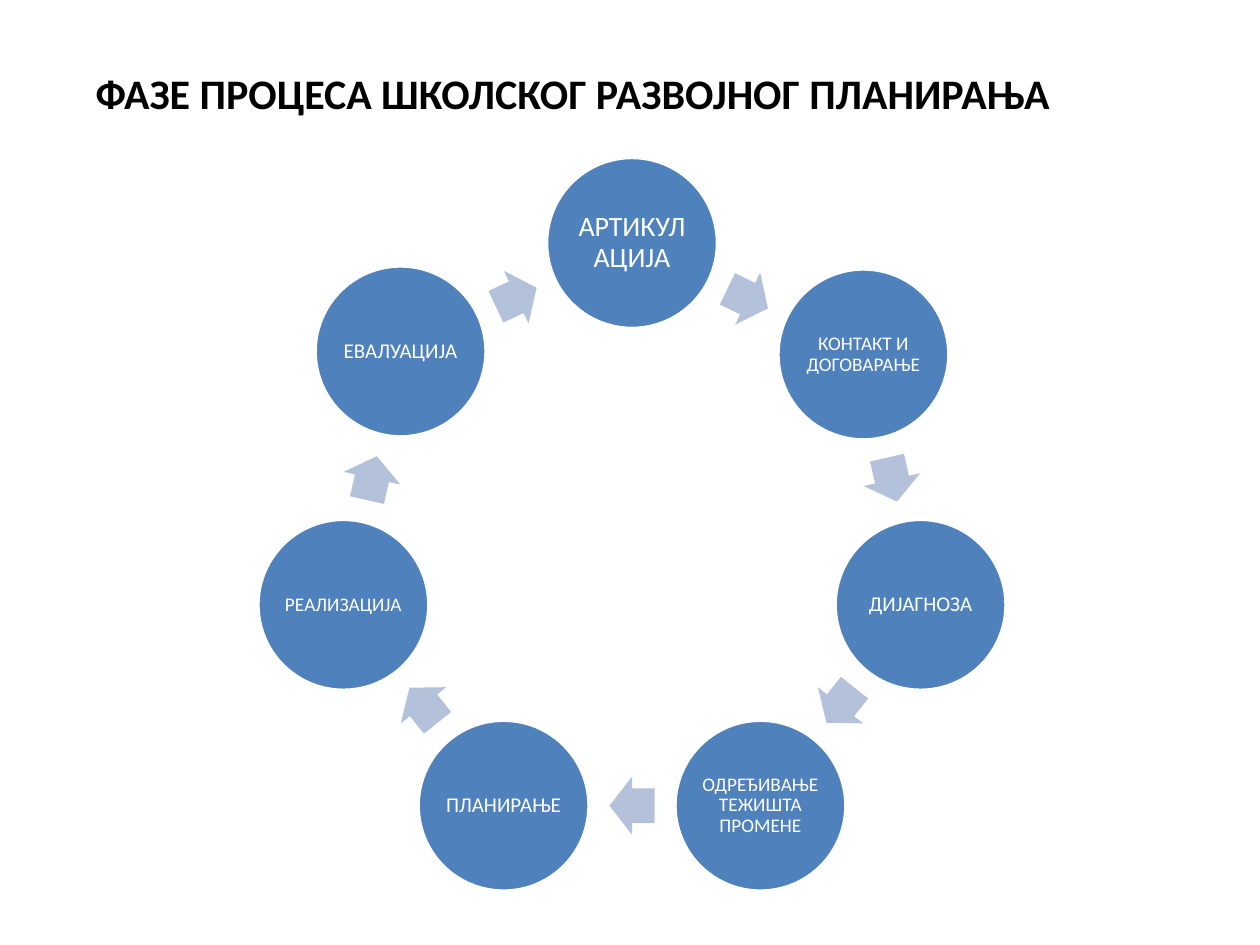
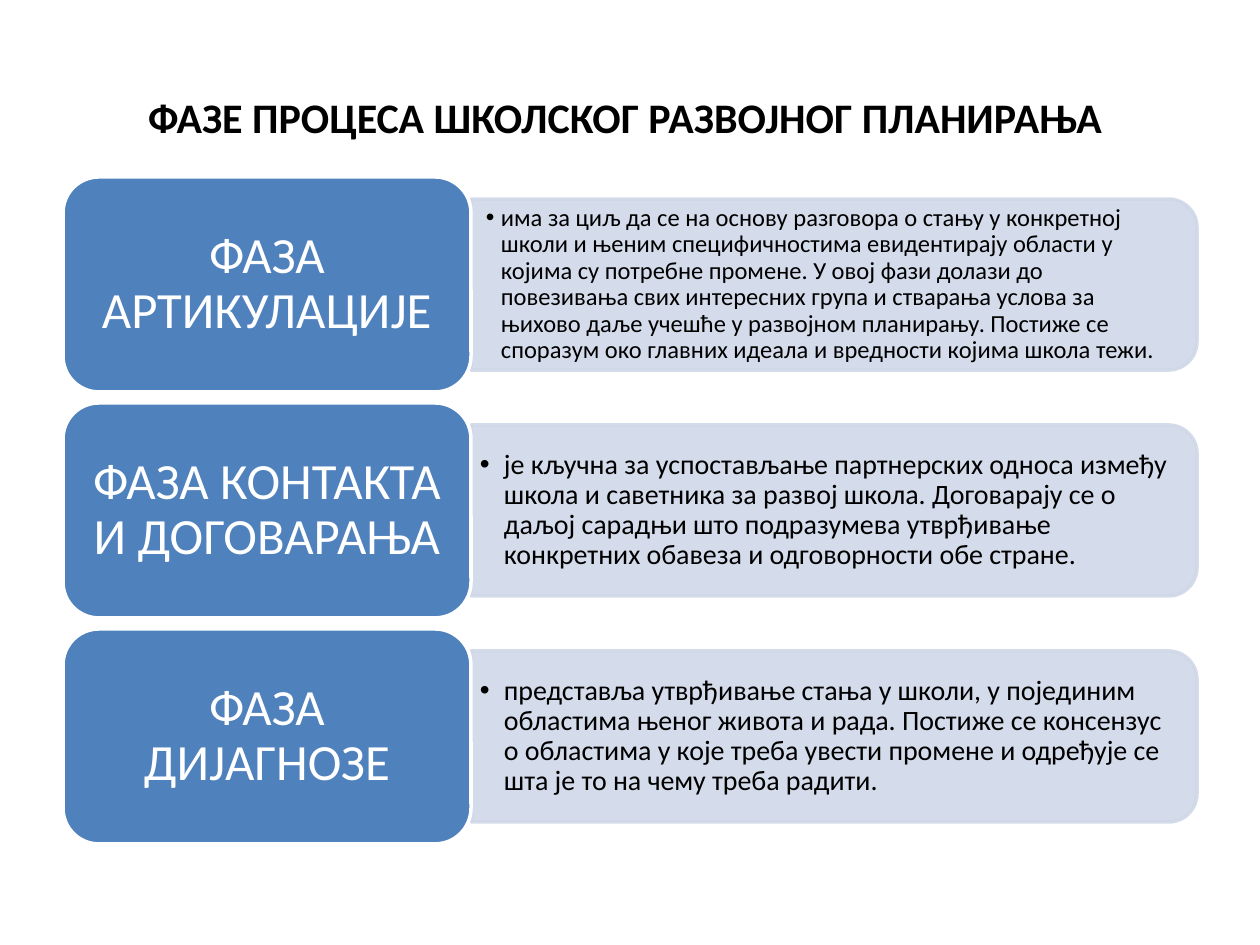
from math import atan2, cos, degrees, pi, sin

from lxml.etree import SubElement
from pptx import Presentation
from pptx.dml.color import RGBColor
from pptx.enum.shapes import MSO_SHAPE
from pptx.enum.text import MSO_ANCHOR, PP_ALIGN
from pptx.oxml.ns import qn
from pptx.util import Pt

TITLE = "ФАЗЕ ПРОЦЕСА ШКОЛСКОГ РАЗВОЈНОГ ПЛАНИРАЊА "
STAGES = [
    ("АРТИКУЛАЦИЈА", 16, 0),
    ("КОНТАКТ И ДОГОВАРАЊЕ", 11, 0),
    ("ДИЈАГНОЗА", 12, 0),
    ("ОДРЕЂИВАЊЕ ТЕЖИШТА ПРОМЕНЕ", 11, 0),
    ("ПЛАНИРАЊЕ", 12, 0),
    ("РЕАЛИЗАЦИЈА", 11, 0),
    ("ЕВАЛУАЦИЈА", 12, 3),
]
PHASES = [
    {
        "name": "ФАЗА АРТИКУЛАЦИЈЕ",
        "text": "има за циљ да се на основу разговора о стању у конкретној школи и њеним "
                "специфичностима евидентирају области у којима су потребне промене. У овој "
                "фази долази до повезивања свих интересних група и стварања услова за њихово "
                "даље учешће у развојном планирању. Постиже се споразум око главних идеала и "
                "вредности којима школа тежи.",
        "size": 14, "insets": (15, 8), "indent": 15,
    },
    {
        "name": "ФАЗА КОНТАКТА И ДОГОВАРАЊА",
        "text": "је кључна за успостављање партнерских односа између школа и саветника за "
                "развој школа. Договарају се о даљој сарадњи што подразумева утврђивање "
                "конкретних обавеза и одговорности обе стране.",
        "size": 16, "insets": (9, 4), "indent": 24,
    },
    {
        "name": "ФАЗА ДИЈАГНОЗЕ",
        "text": "представља утврђивање стања у школи, у појединим областима њеног живота и "
                "рада. Постиже се консензус о областима у које треба увести промене и "
                "одређује се шта је то на чему треба радити.",
        "size": 16, "insets": (9, 4), "indent": 24,
    },
]

FONT = "Calibri"
BLACK = RGBColor(0x00, 0x00, 0x00)
WHITE = RGBColor(0xFF, 0xFF, 0xFF)
BLUE = RGBColor(0x4F, 0x81, 0xBD)
ARROW_BLUE = RGBColor(0xB3, 0xC1, 0xDB)
PALE_BLUE = RGBColor(0xD0, 0xD8, 0xE8)

PX_PER_INCH = 126
RING_X, RING_Y, RING_RADIUS = 632, 539, 296
CIRCLE = 171
ARROW_LENGTH, ARROW_WIDTH = 45, 58
ROW_TOP, ROW_HEIGHT, ROW_GAP = 177, 215, 11
LABEL_LEFT, LABEL_WIDTH = 63, 408
PANEL_WIDTH, PANEL_HEIGHT = 726, 171
DETAIL_WIDTH, DETAIL_HEIGHT = 717, 155


def px(length):
    return round(length * 914400 / PX_PER_INCH)


def write(shape, text, size, color, insets, align=PP_ALIGN.CENTER, bold=False, spacing=0.9):
    frame = shape.text_frame
    frame.word_wrap = True
    frame.vertical_anchor = MSO_ANCHOR.MIDDLE
    frame.margin_left = frame.margin_right = px(insets[0])
    frame.margin_top = frame.margin_bottom = px(insets[1])
    para = frame.paragraphs[0]
    para.alignment = align
    para.line_spacing = spacing
    span = para.add_run()
    span.text = text
    span.font.name = FONT
    span.font.size = Pt(size)
    span.font.bold = bold
    span.font.color.rgb = color
    return para


def add_textbox(page, left, top, width, height):
    return page.shapes.add_textbox(px(left), px(top), px(width), px(height))


def add_centred(page, kind, x, y, width, height, fill, line=None):
    shape = page.shapes.add_shape(
        kind, px(x - width / 2), px(y - height / 2), px(width), px(height))
    shape.shadow.inherit = False
    shape.fill.solid()
    shape.fill.fore_color.rgb = fill
    if line is None:
        shape.line.fill.background()
    else:
        shape.line.color.rgb = line
        shape.line.width = Pt(2)
    return shape


def add_page(deck, title_width, title_height):
    page = deck.slides.add_slide(deck.slide_layouts[6])
    box = add_textbox(page, 63, 38, title_width, title_height)
    write(box, TITLE, 24, BLACK, (13, 6), bold=True, spacing=1)
    return page


def set_opacity(shape, percent):
    for color in shape.element.spPr.iter(qn("a:srgbClr")):
        SubElement(color, qn("a:alpha"), val=str(percent * 1000))


def set_bullet(para, indent):
    properties = para._p.get_or_add_pPr()
    properties.set("marL", str(px(indent)))
    properties.set("indent", str(-px(indent)))
    SubElement(properties, qn("a:buFont"), typeface="Arial")
    SubElement(properties, qn("a:buChar"), char="•")


def draw_cycle(page):
    centres = []
    for index, (_, _, lift) in enumerate(STAGES):
        angle = 2 * pi * index / len(STAGES)
        centres.append((RING_X + RING_RADIUS * sin(angle),
                        RING_Y - RING_RADIUS * cos(angle) - lift))
    following = centres[1:] + centres[:1]
    for (name, size, _), (x, y), (next_x, next_y) in zip(STAGES, centres, following):
        circle = add_centred(page, MSO_SHAPE.OVAL, x, y, CIRCLE, CIRCLE, BLUE, WHITE)
        write(circle, name, size, WHITE, (2, 2))
        arrow = add_centred(page, MSO_SHAPE.RIGHT_ARROW, (x + next_x) / 2, (y + next_y) / 2,
                            ARROW_LENGTH, ARROW_WIDTH, ARROW_BLUE)
        arrow.adjustments[0] = 0.6
        arrow.adjustments[1] = 0.5
        arrow.rotation = degrees(atan2(next_y - y, next_x - x)) % 360


def draw_phases(page):
    panel_left = LABEL_LEFT + LABEL_WIDTH
    for index, phase in enumerate(PHASES):
        middle = ROW_TOP + index * (ROW_HEIGHT + ROW_GAP) + ROW_HEIGHT / 2
        panel = add_centred(page, MSO_SHAPE.ROUND_2_SAME_RECTANGLE,
                            panel_left + PANEL_WIDTH / 2, middle,
                            PANEL_HEIGHT, PANEL_WIDTH, PALE_BLUE, PALE_BLUE)
        panel.rotation = 90
        set_opacity(panel, 90)
        detail = add_textbox(page, panel_left, middle - DETAIL_HEIGHT / 2,
                             DETAIL_WIDTH, DETAIL_HEIGHT)
        para = write(detail, phase["text"], phase["size"], BLACK, phase["insets"],
                     PP_ALIGN.LEFT)
        set_bullet(para, phase["indent"])
        label = add_centred(page, MSO_SHAPE.ROUNDED_RECTANGLE, LABEL_LEFT + LABEL_WIDTH / 2,
                            middle, LABEL_WIDTH, ROW_HEIGHT, BLUE, WHITE)
        write(label, phase["name"], 29, WHITE, (15, 8))


def main():
    deck = Presentation()
    deck.slide_width, deck.slide_height = px(1260), px(945)
    draw_cycle(add_page(deck, 1029, 110))
    draw_phases(add_page(deck, 1134, 158))
    deck.save("out.pptx")


if __name__ == "__main__":
    main()
